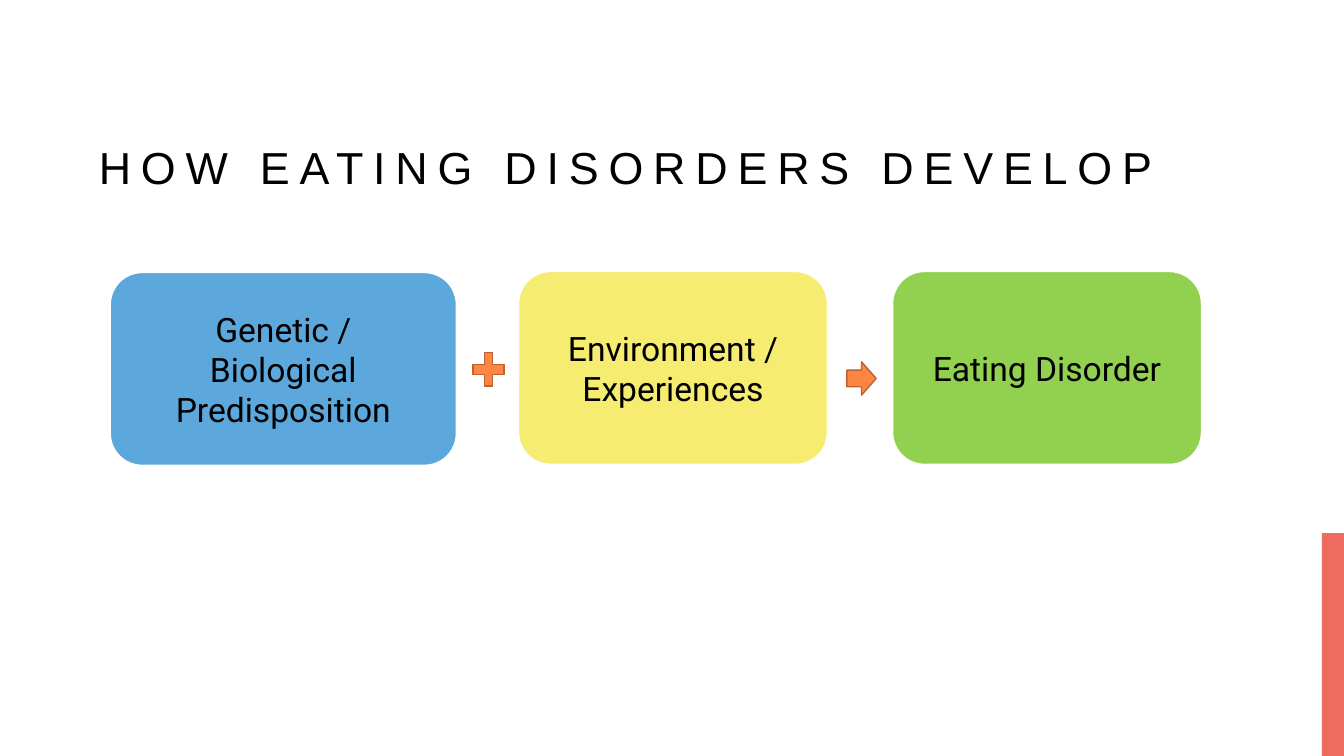
from dataclasses import dataclass

from pptx import Presentation
from pptx import util as u
from pptx.dml.color import RGBColor
from pptx.enum import shapes, text

PX = 9144  # EMU per px, 100 px to the inch

BLACK = RGBColor(0x00, 0x00, 0x00)
WHITE = RGBColor(0xFF, 0xFF, 0xFF)
CORAL = RGBColor(0xEC, 0x6D, 0x60)
BLUE = RGBColor(0x5C, 0xA8, 0xDC)
YELLOW = RGBColor(0xF5, 0xEC, 0x71)
GREEN = RGBColor(0x92, 0xD0, 0x50)
ORANGE = RGBColor(0xFE, 0x85, 0x42)
RUST = RGBColor(0xBC, 0x62, 0x31)

TITLE_FORMAT = {"name": "Arial", "size": u.Pt(32), "bold": False}
FACTOR_FORMAT = {"name": "Roboto", "size": u.Pt(24), "bold": False}


@dataclass(frozen=True)
class Box:
    left: int
    top: int
    width: int
    height: int

    def emu(self) -> tuple:
        return tuple(u.Emu(side * PX)
                     for side in (self.left, self.top, self.width, self.height))


@dataclass(frozen=True)
class Factor:
    box: Box
    color: RGBColor
    lines: tuple


@dataclass(frozen=True)
class Operator:
    kind: shapes.MSO_SHAPE
    box: Box
    adjustments: tuple = ()


FACTORS = (
    Factor(Box(109, 270, 344, 192), BLUE,
           ("Genetic /", "Biological", "Predisposition")),
    Factor(Box(514, 269, 307, 192), YELLOW, ("Environment /", "Experiences")),
    Factor(Box(885, 269, 307, 192), GREEN, ("Eating Disorder",)),
)
OPERATORS = (
    Operator(shapes.MSO_SHAPE.CROSS, Box(469, 350, 31, 33), (0.37,)),
    Operator(shapes.MSO_SHAPE.RIGHT_ARROW, Box(840, 359, 29, 33)),
)


def format_font(font, values: dict) -> None:
    for name, value in values.items():
        setattr(font, name, value)
    font.color.rgb = BLACK


def add_filled(slide, kind, box: Box, fill: RGBColor, line=None, points=0):
    shape = slide.shapes.add_shape(kind, *box.emu())
    shape.shadow.inherit = False
    shape.fill.solid()
    shape.fill.fore_color.rgb = fill
    if line is None:
        shape.line.fill.background()
    else:
        shape.line.color.rgb = line
        shape.line.width = u.Pt(points)
    return shape


def set_title(slide, wording: str, box: Box) -> None:
    title = slide.shapes.title
    title.left, title.top, title.width, title.height = box.emu()
    frame = title.text_frame
    frame.word_wrap = True
    frame.auto_size = text.MSO_AUTO_SIZE.NONE
    frame.vertical_anchor = text.MSO_ANCHOR.BOTTOM
    paragraph = frame.paragraphs[0]
    paragraph.alignment = text.PP_ALIGN.LEFT
    paragraph.line_spacing = 1.2
    run = paragraph.add_run()
    run.text = wording
    format_font(run.font, TITLE_FORMAT)
    run.font._element.set("spc", "700")  # letter spacing of 7 pt


def add_factor(slide, factor: Factor) -> None:
    shape = add_filled(slide, shapes.MSO_SHAPE.ROUNDED_RECTANGLE,
                       factor.box, factor.color, WHITE, 1.5)
    frame = shape.text_frame
    frame.word_wrap = True
    frame.vertical_anchor = text.MSO_ANCHOR.MIDDLE
    frame.text = "\n".join(factor.lines)
    for paragraph in frame.paragraphs:
        paragraph.alignment = text.PP_ALIGN.CENTER
        format_font(paragraph.runs[0].font, FACTOR_FORMAT)


def add_operator(slide, operator: Operator) -> None:
    shape = add_filled(slide, operator.kind, operator.box, ORANGE, RUST, 1)
    for index, value in enumerate(operator.adjustments):
        shape.adjustments[index] = value


def main() -> None:
    presentation = Presentation()
    presentation.slide_width = u.Emu(1333 * PX)
    presentation.slide_height = u.Emu(750 * PX)
    slide = presentation.slides.add_slide(presentation.slide_layouts[5])

    # Accent bar at the right edge
    add_filled(slide, shapes.MSO_SHAPE.RECTANGLE, Box(1311, 529, 22, 221), CORAL)

    # Title
    set_title(slide, "HOW EATING DISORDERS DEVELOP", Box(88, 40, 1133, 157))

    # Equation: factor + factor → outcome
    for factor in FACTORS:
        add_factor(slide, factor)
    for operator in OPERATORS:
        add_operator(slide, operator)

    presentation.save("out.pptx")


if __name__ == "__main__":
    main()
